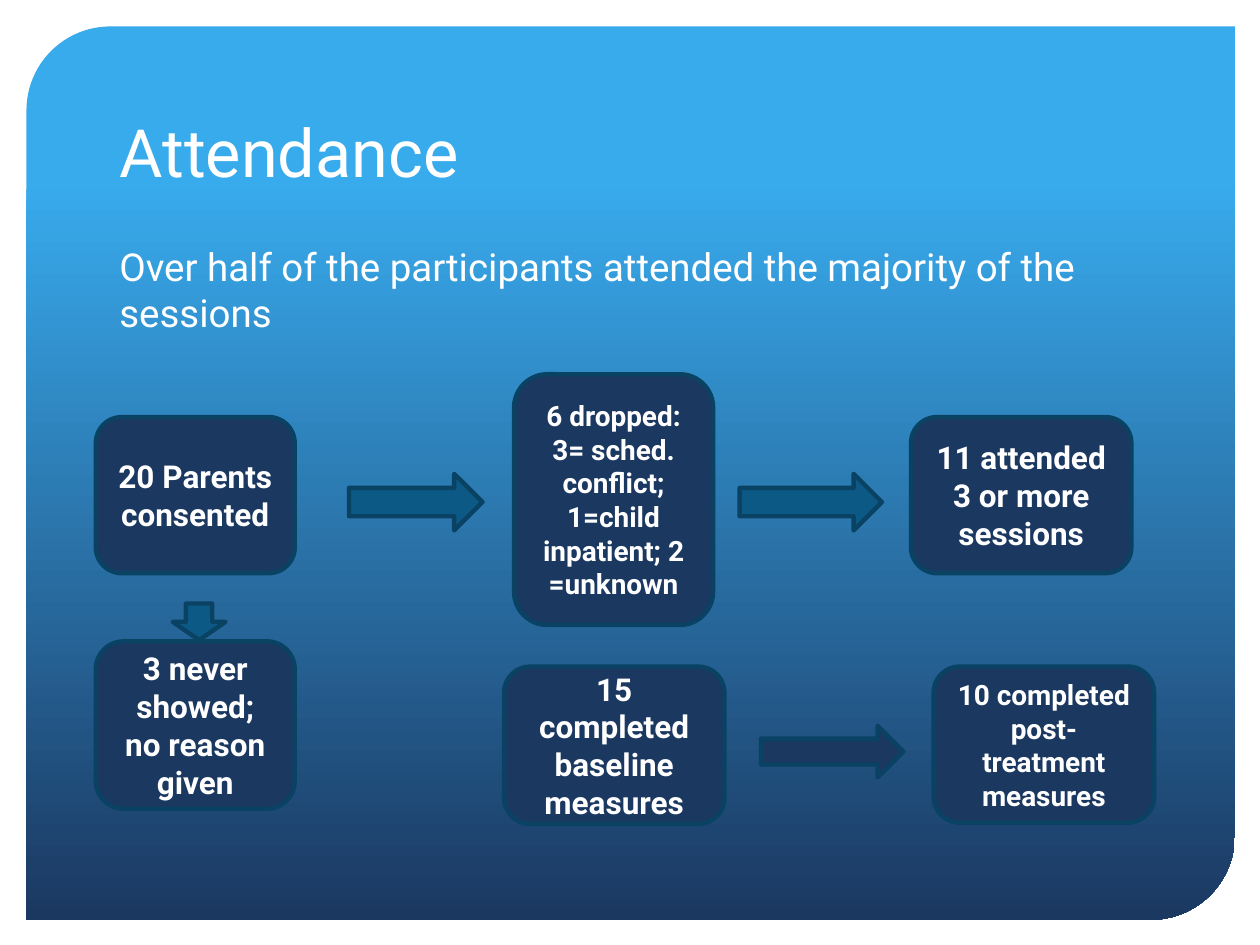
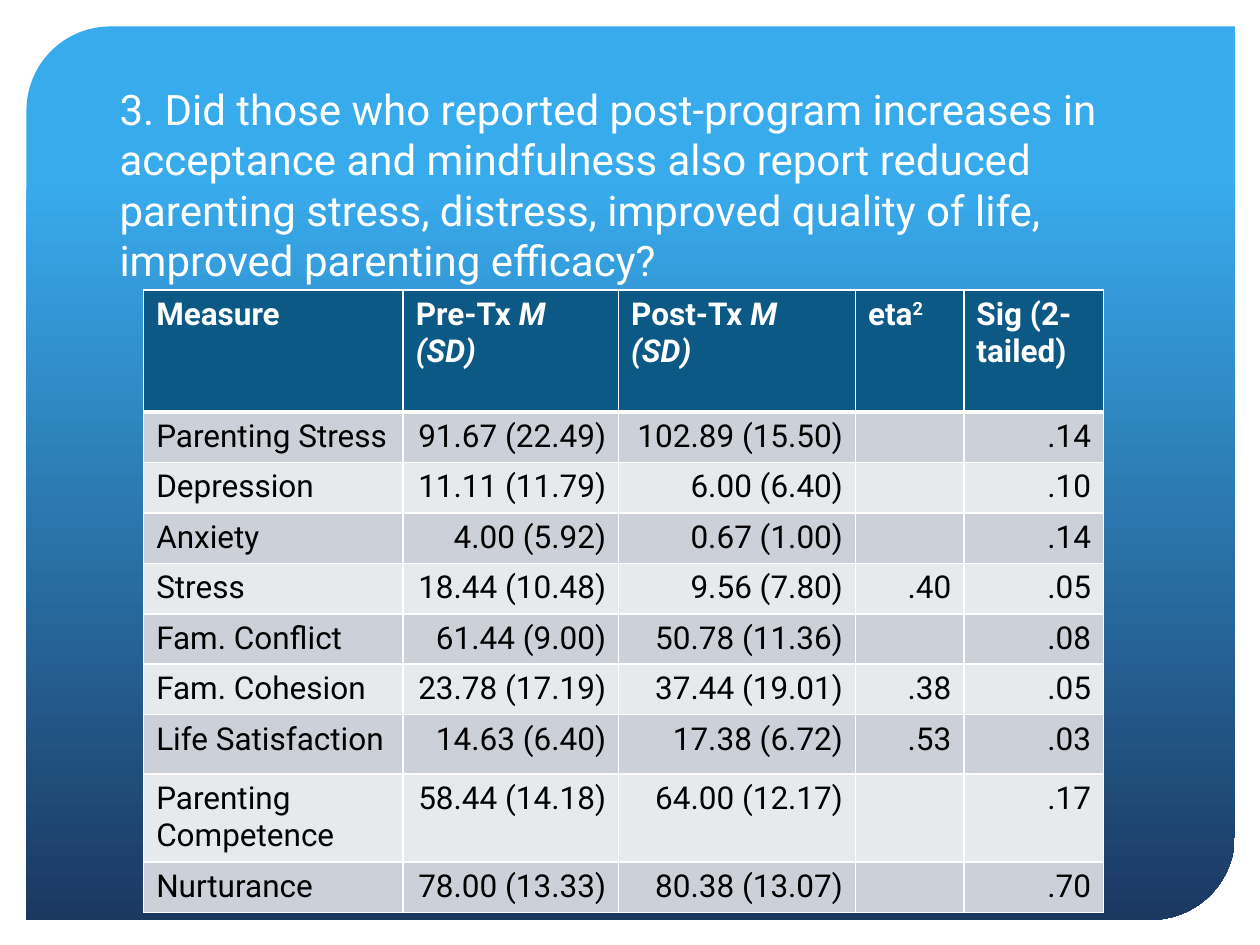
from lxml import etree
from pptx import Presentation
from pptx.dml.color import RGBColor
from pptx.enum.shapes import MSO_SHAPE
from pptx.enum.text import MSO_ANCHOR, PP_ALIGN
from pptx.oxml.ns import qn
from pptx.util import Inches, Pt

# Shared look
FONT = "Roboto"
WHITE = RGBColor(0xFF, 0xFF, 0xFF)
BLACK = RGBColor(0x00, 0x00, 0x00)
SKY = RGBColor(0x38, 0xAB, 0xED)
NAVY = RGBColor(0x1B, 0x38, 0x61)
TEAL = RGBColor(0x0C, 0x59, 0x86)
OUTLINE = RGBColor(0x09, 0x42, 0x63)
BAND_DARK = RGBColor(0xCC, 0xD1, 0xD9)
BAND_LIGHT = RGBColor(0xE7, 0xEA, 0xED)

LEFT, CENTER, RIGHT = PP_ALIGN.LEFT, PP_ALIGN.CENTER, PP_ALIGN.RIGHT
TOP, MIDDLE, BOTTOM = MSO_ANCHOR.TOP, MSO_ANCHOR.MIDDLE, MSO_ANCHOR.BOTTOM
PANEL = MSO_SHAPE.ROUND_2_DIAG_RECTANGLE
ROUNDED = MSO_SHAPE.ROUNDED_RECTANGLE
RIGHT_ARROW, DOWN_ARROW = MSO_SHAPE.RIGHT_ARROW, MSO_SHAPE.DOWN_ARROW

# Attendance flow: left, top, width, height, text size, paragraphs
FLOW_BOXES = [
    (0.76, 3.31, 1.58, 1.24, 18, ["20 Parents consented"]),
    (4.0, 5.29, 1.75, 1.25, 18, ["15 completed baseline measures"]),
    (7.23, 3.31, 1.75, 1.24, 18, ["11 attended 3 or more sessions"]),
    (4.08, 2.97, 1.58, 1.99, 16,
     ["6 dropped: 3= sched. conflict;", "1=child inpatient; 2 =unknown"]),
    (0.76, 5.09, 1.58, 1.33, 18, ["3 never showed; no reason given"]),
    (7.41, 5.29, 1.75, 1.24, 16, ["10 completed post-treatment measures"]),
]
FLOW_ARROWS = [
    (RIGHT_ARROW, 5.87, 3.76, 1.13, 0.45, TEAL),
    (RIGHT_ARROW, 2.77, 3.76, 1.06, 0.45, TEAL),
    (DOWN_ARROW, 1.37, 4.79, 0.42, 0.29, TEAL),
    (RIGHT_ARROW, 6.04, 5.76, 1.13, 0.41, NAVY),
]

# Outcome table: a paragraph may be a list of (text, style) runs
HEADINGS = [
    "Measure",
    [("Pre-Tx ", None), ("M (SD)", "italic")],
    [("Post-Tx ", None), ("M (SD)", "italic")],
    [("eta", None), ("2", "superscript")],
    "Sig (2-tailed)",
]
MEASURES = [
    ("Parenting Stress", "91.67 (22.49)", "102.89 (15.50)", "", ".14"),
    ("Depression", "11.11 (11.79)", "6.00 (6.40)", "", ".10"),
    ("Anxiety", "4.00 (5.92)", "0.67 (1.00)", "", ".14"),
    ("Stress", "18.44 (10.48)", "9.56 (7.80)", ".40", ".05"),
    ("Fam. Conflict", "61.44 (9.00)", "50.78 (11.36)", "", ".08"),
    ("Fam. Cohesion", "23.78 (17.19)", "37.44 (19.01)", ".38", ".05"),
    ("Life Satisfaction", "14.63 (6.40)", "17.38 (6.72)", ".53", ".03"),
    ("Parenting Competence", "58.44 (14.18)", "64.00 (12.17)", "", ".17"),
    ("Nurturance", "78.00 (13.33)", "80.38 (13.07)", "", ".70"),
]
COLUMN_WIDTHS = [2.06, 1.71, 1.88, 0.86, 1.11]
ROW_HEIGHTS = [0.97] + [0.39] * 6 + [0.47, 0.69, 0.39]


def write_text(frame, paragraphs, size=18, color=WHITE, bold=False,
               align=LEFT, anchor=TOP):
    """Fill a text frame with paragraphs in one format."""
    frame.word_wrap = True
    frame.vertical_anchor = anchor
    for index, content in enumerate(paragraphs):
        paragraph = frame.add_paragraph() if index else frame.paragraphs[0]
        paragraph.alignment = align
        paragraph.font.size = Pt(size)
        runs = [(content, None)] if isinstance(content, str) else content
        for text, style in runs:
            if not text:
                continue
            run = paragraph.add_run()
            run.text = text
            run.font.name = FONT
            run.font.size = Pt(size)
            run.font.bold = bold
            run.font.color.rgb = color
            if style == "italic":
                run.font.italic = True
            elif style == "superscript":
                run._r.get_or_add_rPr().set("baseline", "30000")


def add_text(slide, left, top, width, height, text, **text_format):
    box = slide.shapes.add_textbox(
        Inches(left), Inches(top), Inches(width), Inches(height))
    write_text(box.text_frame, [text], **text_format)


def add_title(slide, text, top, height, size):
    add_text(slide, 0.85, top, 8.29, height, text, size=size, anchor=BOTTOM)


def add_preset(slide, kind, left, top, width, height, fill):
    """Add a filled and outlined preset shape."""
    shape = slide.shapes.add_shape(
        kind, Inches(left), Inches(top), Inches(width), Inches(height))
    shape.shadow.inherit = False
    shape.fill.solid()
    shape.fill.fore_color.rgb = fill
    shape.line.color.rgb = OUTLINE
    shape.line.width = Pt(2.5)
    return shape


def add_panel_slide(presentation):
    """Add a blank slide with the gradient panel."""
    slide = presentation.slides.add_slide(presentation.slide_layouts[6])
    panel = add_preset(slide, PANEL, 0.21, 0.21, 9.59, 7.09, SKY)
    panel.adjustments[0] = 0.094
    panel.adjustments[1] = 0
    panel.line.fill.background()
    panel.fill.gradient()
    panel.fill.gradient_angle = 270
    stops = panel.fill.gradient_stops
    for stop, position, color in zip(stops, (0.17, 1), (SKY, NAVY)):
        stop.position = position
        stop.color.rgb = color
    return slide


def add_borders(cell, bottom_width):
    """Draw white lines on the four sides of a cell."""
    properties = cell._tc.get_or_add_tcPr()
    for side, width in (("L", 1), ("R", 1), ("T", 1), ("B", bottom_width)):
        line = etree.SubElement(
            properties, qn(f"a:ln{side}"), w=str(Pt(width)))
        fill = etree.SubElement(line, qn("a:solidFill"))
        etree.SubElement(fill, qn("a:srgbClr"), val=str(WHITE))


def add_measure_table(slide, left, top):
    rows = [HEADINGS, *MEASURES]
    table = slide.shapes.add_table(
        len(rows), len(COLUMN_WIDTHS), Inches(left), Inches(top),
        Inches(sum(COLUMN_WIDTHS)), Inches(sum(ROW_HEIGHTS))).table
    for column, width in zip(table.columns, COLUMN_WIDTHS):
        column.width = Inches(width)
    for row, height in zip(table.rows, ROW_HEIGHTS):
        row.height = Inches(height)

    for row_index, values in enumerate(rows):
        heading = row_index == 0
        band = BAND_DARK if row_index % 2 else BAND_LIGHT
        for column_index, value in enumerate(values):
            cell = table.cell(row_index, column_index)
            # A heavier rule separates the headings from the values
            add_borders(cell, 3 if heading else 1)
            cell.fill.solid()
            cell.fill.fore_color.rgb = TEAL if heading else band
            write_text(cell.text_frame, [value], bold=heading,
                       color=WHITE if heading else BLACK,
                       align=LEFT if heading or column_index == 0 else RIGHT)


def build_attendance(presentation):
    slide = add_panel_slide(presentation)
    add_title(slide, "Attendance", 0.42, 1.14, 38)
    for left, top, width, height, size, paragraphs in FLOW_BOXES:
        box = add_preset(slide, ROUNDED, left, top, width, height, NAVY)
        write_text(box.text_frame, paragraphs, size=size, bold=True,
                   align=CENTER, anchor=MIDDLE)
    for arrow in FLOW_ARROWS:
        add_preset(slide, *arrow)
    add_text(slide, 0.85, 1.88, 8.43, 0.84,
             "Over half of the participants attended the majority of the "
             "sessions", size=22)


def build_outcomes(presentation):
    slide = add_panel_slide(presentation)
    add_title(slide,
              "3. Did those who reported post-program increases in acceptance "
              "and mindfulness also report reduced parenting stress, distress, "
              "improved quality of life, improved parenting efficacy?",
              0.65, 1.66, 24)
    add_measure_table(slide, 1.14, 2.3)


def main():
    presentation = Presentation()
    presentation.slide_width = Inches(10)
    presentation.slide_height = Inches(7.5)
    build_attendance(presentation)
    build_outcomes(presentation)
    presentation.save("out.pptx")


if __name__ == "__main__":
    main()
